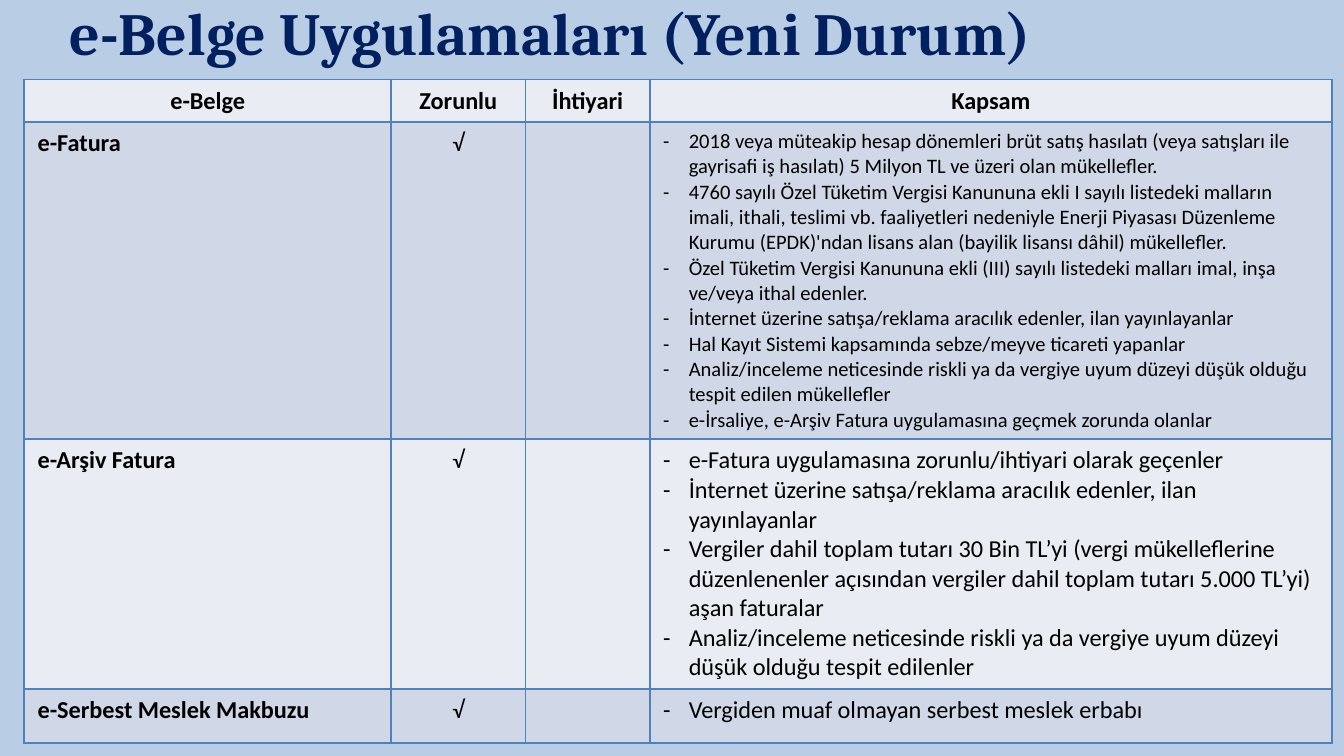
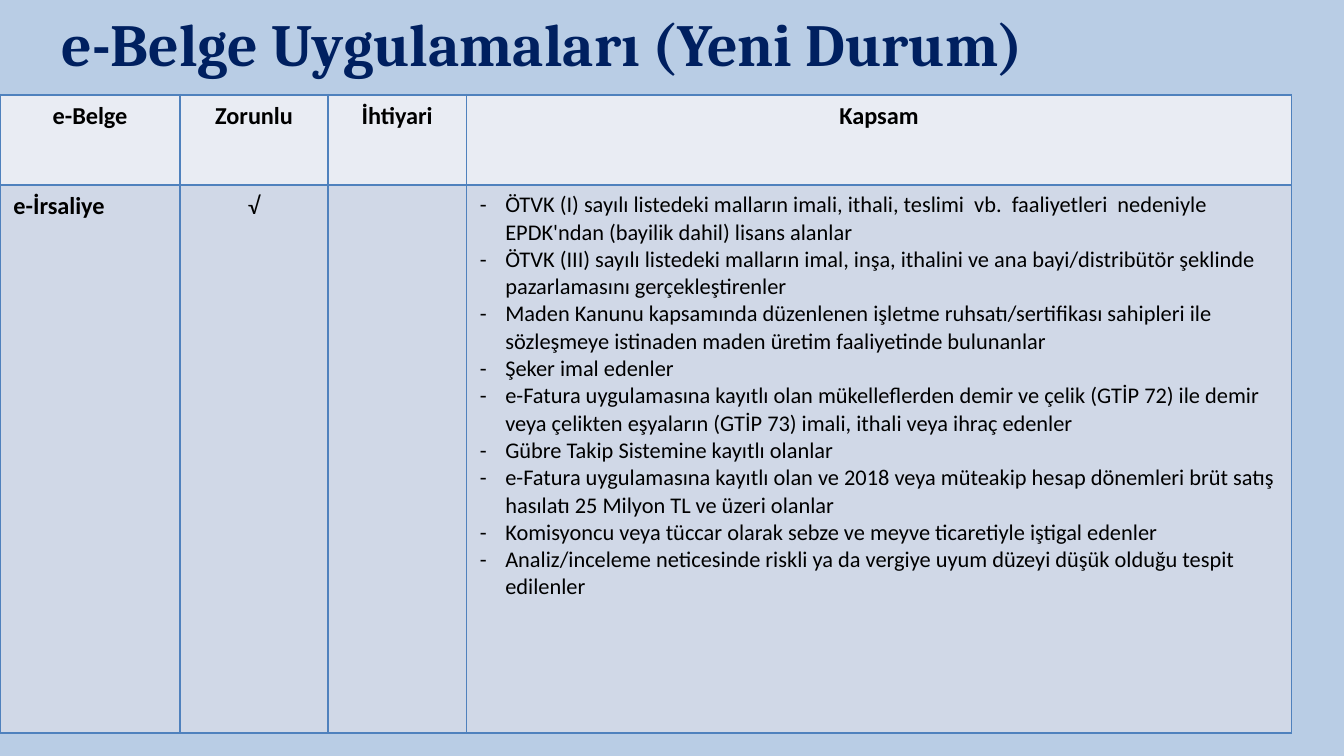
from dataclasses import dataclass

from lxml.etree import SubElement
from pptx import Presentation
from pptx.dml.color import RGBColor
from pptx.enum.text import MSO_ANCHOR, PP_ALIGN
from pptx.oxml.ns import qn
from pptx.util import Inches, Pt

WIDE = Inches(10)
HIGH = WIDE * 9 // 16
STEP = WIDE / 100


@dataclass(frozen=True)
class Theme:
    back: str = "B9CDE5"
    navy: str = "002060"
    ink: str = "000000"
    edge: str = "4F81BD"
    bands: tuple[str, str] = ("E9ECF3", "D0D8E7")
    serif: str = "Cambria"
    sans: str = "Calibri"
    head: int = 32
    body: int = 13
    mid: int = 12
    small: int = 11
    line: float = 0.96


THEME = Theme()
TITLE = "e-Belge Uygulamaları (Yeni Durum)"
HEADS = ("e-Belge", "Zorunlu", "İhtiyari", "Kapsam")


@dataclass(frozen=True)
class Box:
    left: float
    top: float
    width: float
    height: float

    def place(self) -> tuple[int, ...]:
        return tuple(grid(n) for n in (self.left, self.top, self.width, self.height))


@dataclass(frozen=True)
class Entry:
    name: str
    tall: float
    scope: tuple[str, ...]
    size: int = THEME.body


@dataclass(frozen=True)
class Page:
    title: Box
    left: float
    top: float
    cols: tuple[float, ...]
    head: float
    items: tuple[Entry, ...]


PAGES = (
    Page(Box(4.2, 0, 89.2, 4.7), 1.8, 5.9, (27.3, 10, 9.25, 50.75), 3, (
        Entry("e-Fatura", 23.6, (
            "2018 veya müteakip hesap dönemleri brüt satış hasılatı (veya satışları ile gayrisafi iş hasılatı) 5 Milyon TL ve üzeri olan mükellefler.",
            "4760 sayılı Özel Tüketim Vergisi Kanununa ekli I sayılı listedeki malların imali, ithali, teslimi vb. faaliyetleri nedeniyle Enerji Piyasası Düzenleme Kurumu (EPDK)'ndan lisans alan (bayilik lisansı dâhil) mükellefler.",
            "Özel Tüketim Vergisi Kanununa ekli (III) sayılı listedeki malları imal, inşa ve/veya ithal edenler.",
            "İnternet üzerine satışa/reklama aracılık edenler, ilan yayınlayanlar",
            "Hal Kayıt Sistemi kapsamında sebze/meyve ticareti yapanlar",
            "Analiz/inceleme neticesinde riskli ya da vergiye uyum düzeyi düşük olduğu tespit edilen mükellefler",
            "e-İrsaliye, e-Arşiv Fatura uygulamasına geçmek zorunda olanlar",
        ), THEME.small),
        Entry("e-Arşiv Fatura", 18.6, (
            "e-Fatura uygulamasına zorunlu/ihtiyari olarak geçenler",
            "İnternet üzerine satışa/reklama aracılık edenler, ilan yayınlayanlar",
            "Vergiler dahil toplam tutarı 30 Bin TL’yi (vergi mükelleflerine düzenlenenler açısından vergiler dahil toplam tutarı 5.000 TL’yi) aşan faturalar",
            "Analiz/inceleme neticesinde riskli ya da vergiye uyum düzeyi düşük olduğu tespit edilenler",
        )),
        Entry("e-Serbest Meslek Makbuzu", 3, (
            "Vergiden muaf olmayan serbest meslek erbabı",
        )),
    )),
    Page(Box(3.6, 0.9, 88.9, 4.6), 0, 7.05, (13.4, 11, 10.3, 61.4), 6.7, (
        Entry("e-İrsaliye", 40.8, (
            "ÖTVK (I) sayılı listedeki malların imali, ithali, teslimi  vb.  faaliyetleri  nedeniyle EPDK'ndan (bayilik dahil) lisans alanlar",
            "ÖTVK (III) sayılı listedeki malların imal, inşa, ithalini ve ana bayi/distribütör şeklinde pazarlamasını gerçekleştirenler",
            "Maden Kanunu kapsamında düzenlenen işletme ruhsatı/sertifikası sahipleri ile sözleşmeye istinaden maden üretim faaliyetinde bulunanlar",
            "Şeker imal edenler",
            "e-Fatura uygulamasına kayıtlı olan mükelleflerden demir ve çelik (GTİP 72) ile demir veya çelikten eşyaların (GTİP 73) imali, ithali veya ihraç edenler",
            "Gübre Takip Sistemine kayıtlı olanlar",
            "e-Fatura uygulamasına kayıtlı olan ve 2018 veya müteakip hesap dönemleri brüt satış hasılatı 25 Milyon TL ve üzeri olanlar",
            "Komisyoncu veya tüccar olarak sebze ve meyve ticaretiyle iştigal edenler",
            "Analiz/inceleme neticesinde riskli ya da vergiye uyum düzeyi düşük olduğu tespit edilenler",
        ), THEME.mid),
    )),
)


def grid(count: float) -> int:
    return round(count * STEP)


def tint(parent, color: str) -> None:
    SubElement(SubElement(parent, qn("a:solidFill")), qn("a:srgbClr"), val=color)


def dash(para) -> None:
    props = para._p.get_or_add_pPr()
    props.set("marL", str(grid(1.9)))
    props.set("indent", str(-grid(1.9)))
    SubElement(SubElement(props, qn("a:buClr")), qn("a:srgbClr"), val=THEME.ink)
    SubElement(props, qn("a:buFont"), typeface=THEME.sans)
    SubElement(props, qn("a:buChar"), char="-")


def write(frame, *lines: str, size: int = THEME.body, font: str = THEME.sans,
          color: str = THEME.ink, bold: bool = False,
          align: PP_ALIGN = PP_ALIGN.LEFT, dashed: bool = False) -> None:
    for i, line in enumerate(lines):
        para = frame.add_paragraph() if i else frame.paragraphs[0]
        para.alignment = align
        if dashed:
            dash(para)
        run = para.add_run()
        run.text = line
        run.font.size = Pt(size)
        run.font.name = font
        run.font.bold = bold
        run.font.color.rgb = RGBColor.from_string(color)


def paint(cell, color: str) -> None:
    props = cell._tc.get_or_add_tcPr()
    for side in ("lnL", "lnR", "lnT", "lnB"):
        tint(SubElement(props, qn(f"a:{side}"), w=str(Pt(THEME.line))), THEME.edge)
    cell.fill.solid()
    cell.fill.fore_color.rgb = RGBColor.from_string(color)


def draw_title(slide, box: Box) -> None:
    frame = slide.shapes.add_textbox(*box.place()).text_frame
    frame.word_wrap = True
    frame.vertical_anchor = MSO_ANCHOR.MIDDLE
    write(frame, TITLE, size=THEME.head, font=THEME.serif, color=THEME.navy, bold=True)


def draw_table(slide, page: Page) -> None:
    talls = (page.head, *(item.tall for item in page.items))
    box = Box(page.left, page.top, sum(page.cols), sum(talls))
    table = slide.shapes.add_table(len(talls), len(page.cols), *box.place()).table
    table.horz_banding = False
    table.first_row = False
    for col, width in zip(table.columns, page.cols):
        col.width = grid(width)
    for i, (row, tall) in enumerate(zip(table.rows, talls)):
        row.height = grid(tall)
        for cell in row.cells:
            paint(cell, THEME.bands[i % 2])
    for i, head in enumerate(HEADS):
        write(table.cell(0, i).text_frame, head, bold=True, align=PP_ALIGN.CENTER)
    for i, item in enumerate(page.items, 1):
        write(table.cell(i, 0).text_frame, item.name, bold=True)
        write(table.cell(i, 1).text_frame, "√", align=PP_ALIGN.CENTER)
        write(table.cell(i, 3).text_frame, *item.scope, size=item.size, dashed=True)


def main() -> None:
    deck = Presentation()
    deck.slide_width, deck.slide_height = WIDE, HIGH
    for page in PAGES:
        slide = deck.slides.add_slide(deck.slide_layouts[6])
        slide.background.fill.solid()
        slide.background.fill.fore_color.rgb = RGBColor.from_string(THEME.back)
        draw_title(slide, page.title)
        draw_table(slide, page)
    deck.save("out.pptx")


if __name__ == "__main__":
    main()
